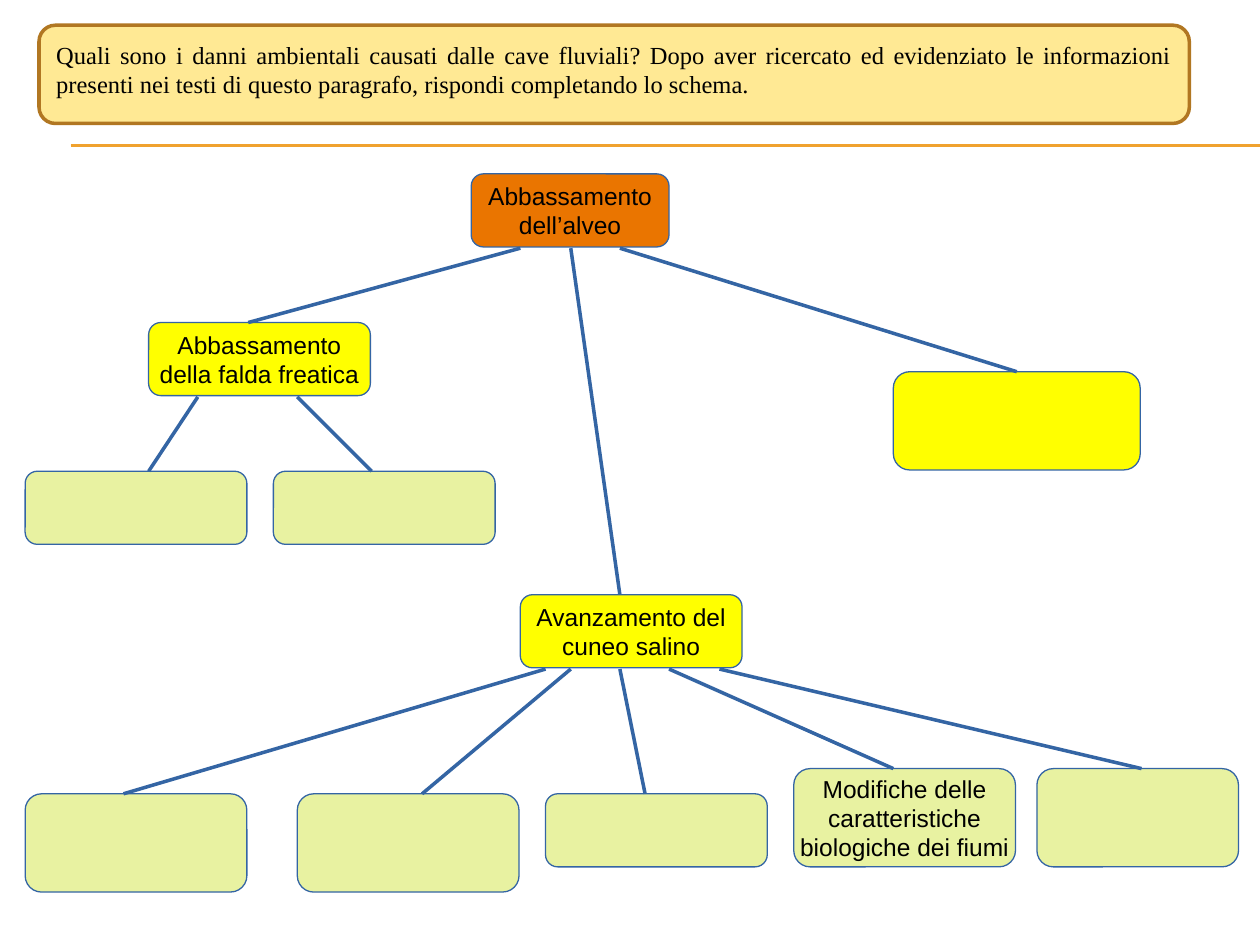
import pptx
import pptx.dml.color
import pptx.enum.shapes
import pptx.enum.text
import pptx.util
from pptx.util import Inches

ORANGE, YELLOW, GREEN = "EA7500", "FFFF00", "E8F2A1"
BLUE, GOLD, BROWN, CREAM, BLACK = "3465A4", "F0A22E", "B17722", "FFE994", "000000"
LOW, TALL = 0.58, 0.78  # box heights
WIDE = 1.76  # usual box width

QUESTION = (
    "Quali sono i danni ambientali causati dalle cave fluviali? Dopo aver ricercato ed "
    "evidenziato le informazioni presenti nei testi di questo paragrafo, rispondi "
    "completando lo schema."
)

# left, top, width, height, fill, lines of text
BOXES = [
    (3.74, 1.38, 1.57, LOW, ORANGE, ["Abbassamento", "dell’alveo"]),
    (1.18, 2.56, WIDE, LOW, YELLOW, ["Abbassamento", "della falda freatica"]),
    (0.2, 3.74, WIDE, LOW, GREEN, []),
    (2.17, 3.74, WIDE, LOW, GREEN, []),
    (7.09, 2.95, 1.96, TALL, YELLOW, []),
    (4.13, 4.72, WIDE, LOW, YELLOW, ["Avanzamento del", "cuneo salino"]),
    (0.2, 6.3, WIDE, TALL, GREEN, []),
    (2.36, 6.3, WIDE, TALL, GREEN, []),
    (4.33, 6.3, WIDE, LOW, GREEN, []),
    (8.23, 6.1, 1.6, TALL, GREEN, []),
    (6.3, 6.1, WIDE, TALL, GREEN, ["Modifiche delle", "caratteristiche", "biologiche dei fiumi"]),
]

# bottom of the parent box: (x at parent, x at child, top of child)
BRANCHES = {
    1.97: [(4.13, 1.97, 2.56), (4.53, 4.92, 4.72), (4.92, 8.07, 2.95)],
    3.15: [(1.57, 1.18, 3.74), (2.36, 2.95, 3.74)],
    5.31: [(4.33, 0.98, 6.3), (4.53, 3.35, 6.3), (4.92, 5.12, 6.3),
           (5.31, 7.09, 6.1), (5.71, 9.06, 6.1)],
}


def color(hex_value):
    return pptx.dml.color.RGBColor.from_string(hex_value)


def set_values(target, values):
    for name, value in values.items():
        setattr(target, name, value)


def set_line(line, hex_value, points):
    line.color.rgb = color(hex_value)
    line.width = pptx.util.Pt(points)


def add_box(slide, left, top, width, height, fill, line_color=BLUE, line_width=0):
    shape = slide.shapes.add_shape(
        pptx.enum.shapes.MSO_SHAPE.ROUNDED_RECTANGLE,
        Inches(left), Inches(top), Inches(width), Inches(height),
    )
    shape.shadow.inherit = False
    shape.fill.solid()
    shape.fill.fore_color.rgb = color(fill)
    set_line(shape.line, line_color, line_width)
    return shape


def write_text(shape, lines, font_name, alignment, frame_values):
    frame = shape.text_frame
    set_values(frame, frame_values)
    for index, line in enumerate(lines):
        paragraph = frame.add_paragraph() if index else frame.paragraphs[0]
        paragraph.text = line
        paragraph.alignment = alignment
        set_values(paragraph.font, {"name": font_name, "size": pptx.util.Pt(14)})
        paragraph.font.color.rgb = color(BLACK)


def add_line(slide, start, end, line_color=BLUE, line_width=0):
    connector = slide.shapes.add_connector(
        pptx.enum.shapes.MSO_CONNECTOR.STRAIGHT, *map(Inches, start + end)
    )
    set_line(connector.line, line_color, line_width)
    properties = connector._element.spPr
    properties.append(pptx.oxml.xmlchemy.OxmlElement("a:effectLst"))


def add_question(slide):
    shape = add_box(slide, 0.31, 0.2, 9.13, 0.78, CREAM, BROWN, 2)
    write_text(shape, [QUESTION], "Times New Roman", pptx.enum.text.PP_ALIGN.JUSTIFY, {
        "word_wrap": True,
        "vertical_anchor": pptx.enum.text.MSO_ANCHOR.TOP,
        "margin_top": Inches(0.08),
    })


def main():
    presentation = pptx.Presentation()
    set_values(presentation, {"slide_width": Inches(10), "slide_height": Inches(7.5)})
    slide = presentation.slides.add_slide(presentation.slide_layouts[6])

    for y in (1.15, 1.16):
        add_line(slide, (0.56, y), (10, y), GOLD, 0.75)
    for *place, fill, lines in BOXES:
        shape = add_box(slide, *place, fill)
        write_text(shape, lines, "Arial", pptx.enum.text.PP_ALIGN.CENTER, {
            "word_wrap": False,
            "vertical_anchor": pptx.enum.text.MSO_ANCHOR.MIDDLE,
        })
    for parent_bottom, branches in BRANCHES.items():
        for parent_x, child_x, child_top in branches:
            add_line(slide, (parent_x, parent_bottom), (child_x, child_top))
    add_question(slide)

    presentation.save("out.pptx")


if __name__ == "__main__":
    main()
